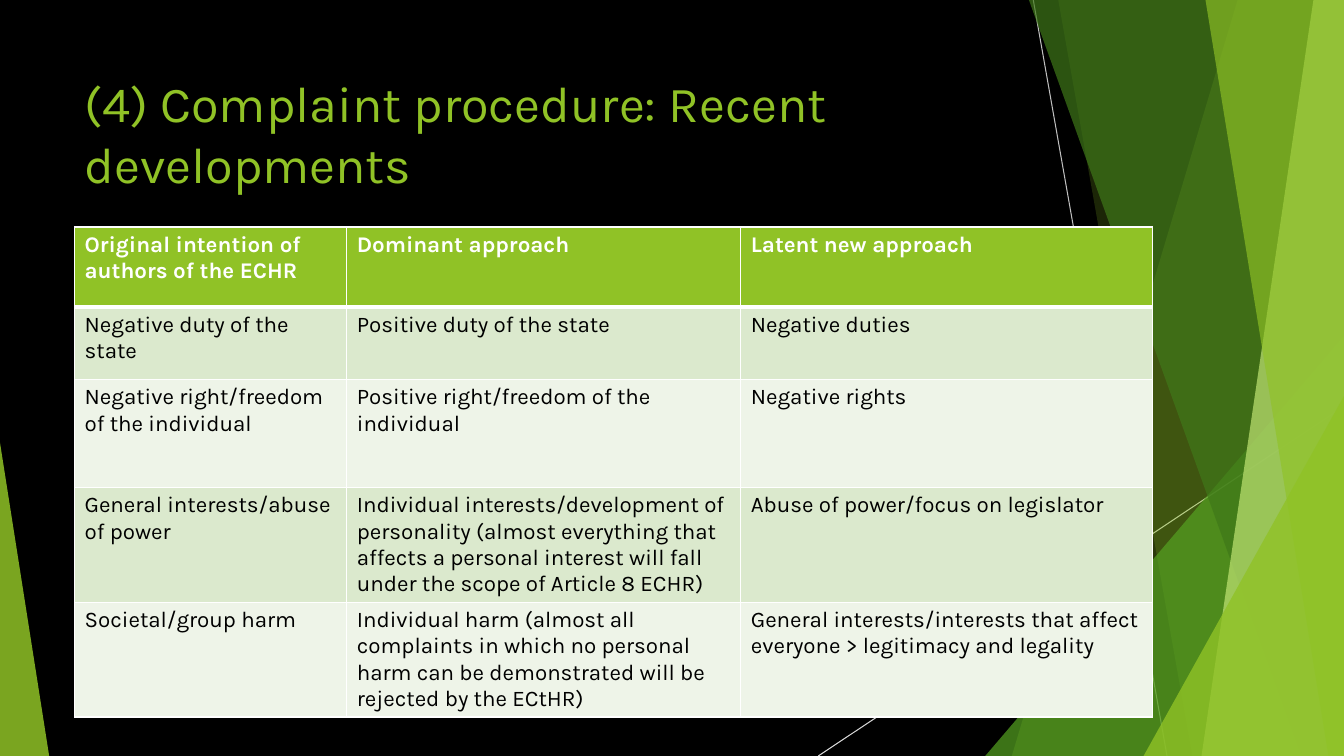
from dataclasses import dataclass

from lxml.etree import SubElement
from pptx import Presentation
from pptx.dml.color import RGBColor
from pptx.enum.shapes import MSO_CONNECTOR as Connector, MSO_SHAPE as Preset
from pptx.enum.text import MSO_ANCHOR as Anchor, MSO_AUTO_SIZE as AutoSize, PP_ALIGN as Align
from pptx.oxml.ns import qn
from pptx.util import Cm, Pt


@dataclass(frozen=True)
class Theme:
    font: str = "Karla"
    title_size: int = 36
    table_size: int = 16
    hairline: float = 0.75
    border: int = 1
    header_border: int = 3
    background: str = "000000"
    accent: str = "90C226"
    green: str = "54A021"
    dark_green: str = "3F7819"
    pale_green: str = "C0E474"
    line_dark: str = "BFBFBF"
    line_light: str = "D9D9D9"
    white: str = "FFFFFF"
    black: str = "000000"
    row_bands: tuple = ("DBE9CD", "EEF4E8")


THEME = Theme()
WIDTH, HEIGHT = 33.87, 19.05  # centimetres, like every box below
TITLE_BOX = (1.88, 1.7, 23.88, 3.66)
TABLE_BOX = (1.88, 5.72, 27.16, 11.99)
COLUMN_WIDTHS = (6.86, 9.93, 10.37)
ROW_HEIGHTS = (2.01, 1.83, 2.72, 2.72, 2.72)

TITLE = "(4) Complaint procedure: Recent developments"
APPROACHES = (
    ("Original intention of authors of the ECHR", "Dominant approach", "Latent new approach"),
    ("Negative duty of the state", "Positive duty of the state", "Negative duties"),
    ("Negative right/freedom of the individual", "Positive right/freedom of the individual",
     "Negative rights"),
    ("General interests/abuse of power",
     "Individual interests/development of personality (almost everything that affects "
     "a personal interest will fall under the scope of Article 8 ECHR)",
     "Abuse of power/focus on legislator"),
    ("Societal/group harm",
     "Individual harm (almost all complaints in which no personal harm can be "
     "demonstrated will be rejected by the ECtHR)",
     "General interests/interests that affect everyone > legitimacy and legality"),
)


def rgb(color):
    return RGBColor.from_string(color)


def style_font(font, size, color, bold=False):
    font.name, font.size, font.bold = THEME.font, Pt(size), bold
    font.color.rgb = rgb(color)


def paint(shape, color, opacity):
    """Give a shape a translucent fill with no line or shadow."""
    shape.shadow.inherit = False
    shape.line.fill.background()
    shape.fill.solid()
    shape.fill.fore_color.rgb = rgb(color)
    tint = shape._element.spPr.find(qn("a:solidFill"))[0]
    SubElement(tint, qn("a:alpha"), val=str(opacity * 1000))


def add_hairline(page, start, end, color):
    line = page.shapes.add_connector(Connector.STRAIGHT, *map(Cm, start + end))
    line.line.color.rgb = rgb(color)
    line.line.width = Pt(THEME.hairline)
    SubElement(line._element.spPr, qn("a:effectLst"))


def add_band(page, box, top_left, bottom_left, color, opacity):
    """Fill the area from a slanted left edge to the right side of the box."""
    left, top, width, height = box
    right, bottom = left + width, top + height
    corners = [(right, top), (right, bottom), (bottom_left, bottom)]
    builder = page.shapes.build_freeform(Cm(top_left), Cm(top))
    builder.add_line_segments([(Cm(x), Cm(y)) for x, y in corners], close=True)
    paint(builder.convert_to_shape(), color, opacity)


def add_triangle(page, box, apex, color, opacity):
    triangle = page.shapes.add_shape(Preset.ISOSCELES_TRIANGLE, *map(Cm, box))
    triangle.adjustments[0] = apex
    paint(triangle, color, opacity)


def add_facets(page, box):
    left, top, width, height = box
    right, bottom = left + width, top + height

    def corner(base, rise):
        return right - base, bottom - rise, base, rise

    # Thin crossing lines
    add_hairline(page, (26.04, top), (29.41, bottom), THEME.line_dark)
    add_hairline(page, (right, 10.24), (20.62, bottom), THEME.line_light)
    # Right-hand facets, back to front
    add_band(page, box, 31.19, 25.5, THEME.accent, 30)
    add_band(page, box, 26.67, 30.05, THEME.accent, 20)
    add_triangle(page, corner(9.04, 10.59), 1, THEME.green, 72)
    add_band(page, box, 25.93, 32.79, THEME.dark_green, 70)
    add_band(page, box, 33.1, 30.28, THEME.pale_green, 70)
    add_band(page, box, 30.38, 33.48, THEME.accent, 65)
    add_triangle(page, corner(5.05, 9.07), 1, THEME.accent, 80)
    # Left-hand facet
    add_triangle(page, (left, bottom - 7.9, 1.24, 7.9), 0, THEME.accent, 85)


def add_title(page, box):
    title = page.shapes.title
    title.left, title.top, title.width, title.height = map(Cm, box)
    frame = title.text_frame
    frame.text = TITLE
    frame.word_wrap = True
    frame.auto_size = AutoSize.NONE
    frame.vertical_anchor = Anchor.TOP
    para = frame.paragraphs[0]
    para.alignment = Align.LEFT
    style_font(para.font, THEME.title_size, THEME.accent)


def set_borders(cell, top, bottom):
    properties = cell._tc.get_or_add_tcPr()
    widths = {"L": THEME.border, "R": THEME.border, "T": top, "B": bottom}
    for side, width in widths.items():
        edge = SubElement(properties, qn(f"a:ln{side}"), w=str(Pt(width)))
        SubElement(SubElement(edge, qn("a:solidFill")), qn("a:srgbClr"), val=THEME.white)


def fill_cell(cell, text, row):
    header = row == 0
    set_borders(cell,
                top=THEME.header_border if row == 1 else THEME.border,
                bottom=THEME.header_border if header else THEME.border)
    cell.fill.solid()
    cell.fill.fore_color.rgb = rgb(THEME.accent if header else THEME.row_bands[(row - 1) % 2])
    cell.text = text
    style_font(cell.text_frame.paragraphs[0].font, THEME.table_size,
               THEME.white if header else THEME.black, header)


def add_approach_table(page, box):
    table = page.shapes.add_table(len(APPROACHES), len(COLUMN_WIDTHS), *map(Cm, box)).table
    for column, width in zip(table.columns, COLUMN_WIDTHS):
        column.width = Cm(width)
    for row, height in zip(table.rows, ROW_HEIGHTS):
        row.height = Cm(height)
    for row, texts in enumerate(APPROACHES):
        for column, text in enumerate(texts):
            fill_cell(table.cell(row, column), text, row)


def main():
    deck = Presentation()
    deck.slide_width, deck.slide_height = Cm(WIDTH), Cm(HEIGHT)
    page = deck.slides.add_slide(deck.slide_layouts.get_by_name("Title Only"))
    page.background.fill.solid()
    page.background.fill.fore_color.rgb = rgb(THEME.background)
    add_facets(page, (0, 0, WIDTH, HEIGHT))
    add_title(page, TITLE_BOX)
    add_approach_table(page, TABLE_BOX)
    deck.save("out.pptx")


if __name__ == "__main__":
    main()
